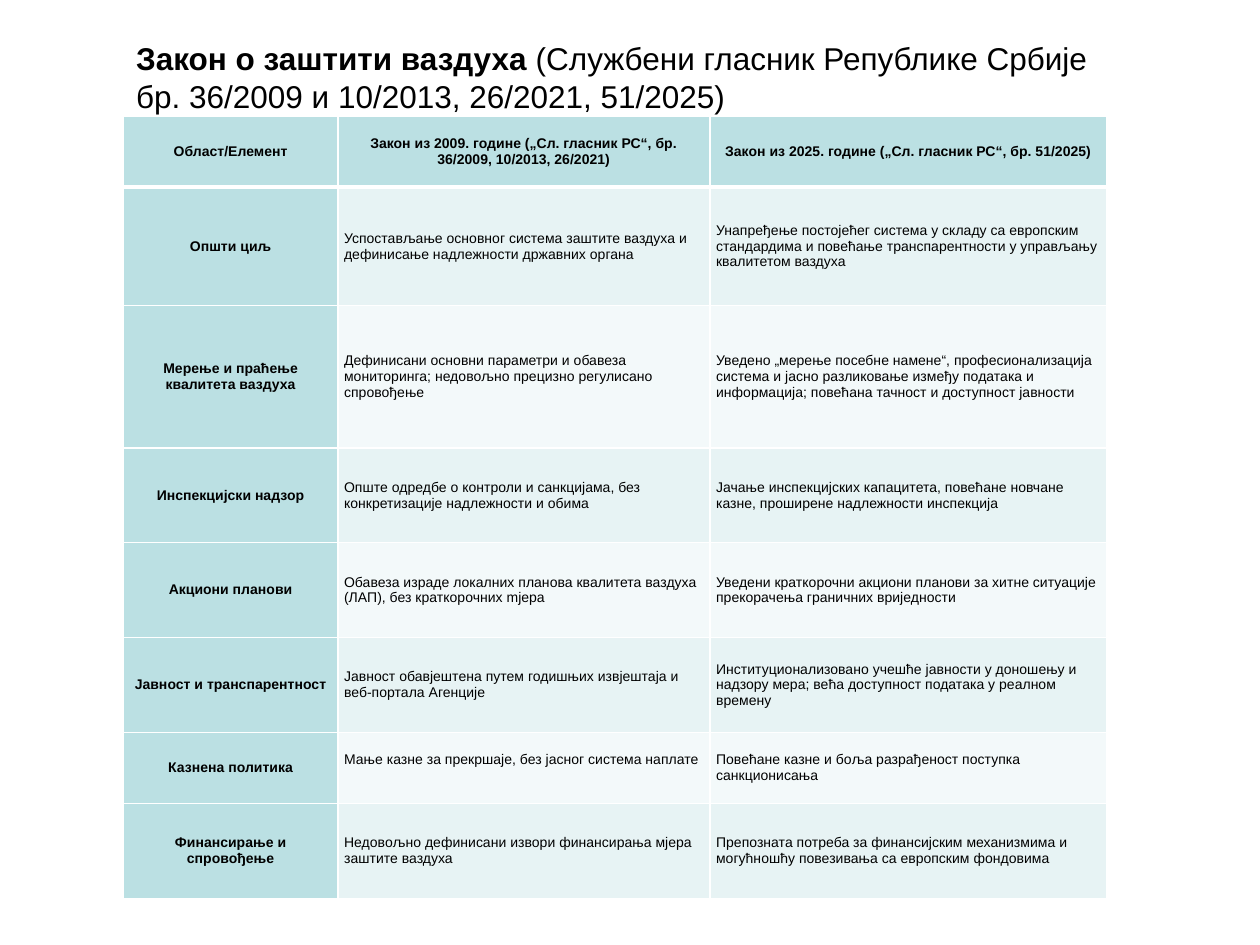
from dataclasses import dataclass

from lxml.etree import SubElement
from pptx import Presentation
from pptx.dml.color import RGBColor
from pptx.enum.text import MSO_ANCHOR as Anchor, MSO_AUTO_SIZE as AutoSize, PP_ALIGN as Align
from pptx.oxml.ns import qn
from pptx.util import Pt


@dataclass(frozen=True)
class Theme:
    font: str = "Arial"
    ink: str = "000000"
    border: str = "FFFFFF"
    label_fill: str = "BBE0E3"
    bands: tuple = ("E7F3F4", "F3F9FA")
    title_size: float = 18
    cell_size: float = 8


def apply(target, values):
    for name, value in values.items():
        setattr(target, name, value)


class LawSlide:
    def __init__(self, slide, theme):
        self.slide = slide
        self.theme = theme

    def add_text(self, paragraph, text, size, bold):
        run = paragraph.add_run()
        run.text = text
        apply(run.font, {"name": self.theme.font, "size": Pt(size), "bold": bold})
        run.font.color.rgb = RGBColor.from_string(self.theme.ink)

    def title(self, name, reference, left, top, width, height):
        heading = self.slide.shapes.title
        apply(heading, {"left": Pt(left), "top": Pt(top), "width": Pt(width), "height": Pt(height)})
        apply(heading.text_frame, {"word_wrap": True, "auto_size": AutoSize.NONE,
                                   "vertical_anchor": Anchor.TOP})
        paragraph = heading.text_frame.paragraphs[0]
        apply(paragraph, {"alignment": Align.LEFT, "space_before": Pt(6), "space_after": Pt(6)})
        self.add_text(paragraph, name, self.theme.title_size, True)
        self.add_text(paragraph, reference, self.theme.title_size, False)

    def borders(self, cell, bottom):
        props = cell._tc.get_or_add_tcPr()
        widths = {"a:lnL": 1, "a:lnR": 1, "a:lnT": 1, "a:lnB": bottom}
        for side, width in widths.items():
            line = SubElement(props, qn(side), w=str(Pt(width)))
            fill = SubElement(line, qn("a:solidFill"))
            SubElement(fill, qn("a:srgbClr"), val=self.theme.border)

    def cell(self, cell, text, is_label, fill, bottom_border):
        # Borders precede the fill in the cell properties
        self.borders(cell, bottom_border)
        cell.fill.solid()
        cell.fill.fore_color.rgb = RGBColor.from_string(fill)
        apply(cell, {"margin_left": Pt(3.6), "margin_right": Pt(3.6), "margin_top": 0,
                     "margin_bottom": 0, "vertical_anchor": Anchor.MIDDLE})
        paragraph = cell.text_frame.paragraphs[0]
        paragraph.alignment = Align.CENTER if is_label else Align.LEFT
        self.add_text(paragraph, text, self.theme.cell_size, is_label)

    def table(self, rows, left, top, column_widths, row_heights):
        frame = self.slide.shapes.add_table(
            len(rows), len(column_widths), Pt(left), Pt(top),
            Pt(sum(column_widths)), Pt(sum(row_heights)))
        table = frame.table
        apply(table, {"first_row": False, "horz_banding": False})
        for column, width in zip(table.columns, column_widths):
            column.width = Pt(width)
        for r, (texts, height) in enumerate(zip(rows, row_heights)):
            table.rows[r].height = Pt(height)
            for c, text in enumerate(texts):
                is_label = r == 0 or c == 0
                fill = self.theme.label_fill if is_label else self.theme.bands[(r - 1) % 2]
                self.cell(table.cell(r, c), text, is_label, fill, 3 if r == 0 else 1)
        return table


COMPARISON = [
    ("Област/Елемент",
     "Закон из 2009. године („Сл. гласник РС“, бр. 36/2009, 10/2013, 26/2021)",
     "Закон из 2025. године („Сл. гласник РС“, бр. 51/2025)"),
    ("Општи циљ",
     "Успостављање основног система заштите ваздуха и дефинисање надлежности државних органа",
     "Унапређење постојећег система у складу са европским стандардима и повећање "
     "транспарентности у управљању квалитетом ваздуха"),
    ("Мерење и праћење квалитета ваздуха",
     "Дефинисани основни параметри и обавеза мониторинга; недовољно прецизно регулисано "
     "спровођење",
     "Уведено „мерење посебне намене“, професионализација система и јасно разликовање између "
     "података и информација; повећана тачност и доступност јавности"),
    ("Инспекцијски надзор",
     "Опште одредбе о контроли и санкцијама, без конкретизације надлежности и обима",
     "Јачање инспекцијских капацитета, повећане новчане казне, проширене надлежности инспекција"),
    ("Акциони планови",
     "Обавеза израде локалних планова квалитета ваздуха (ЛАП), без краткорочних mjера",
     "Уведени краткорочни акциони планови за хитне ситуације прекорачења граничних вриједности"),
    ("Јавност и транспарентност",
     "Јавност обавјештена путем годишњих извјештаја и веб-портала Агенције",
     "Институционализовано учешће јавности у доношењу и надзору мера; већа доступност "
     "података у реалном времену"),
    ("Казнена политика",
     "Мање казне за прекршаје, без јасног система наплате",
     "Повећане казне и боља разрађеност поступка санкционисања"),
    ("Финансирање и спровођење",
     "Недовољно дефинисани извори финансирања мјера заштите ваздуха",
     "Препозната потреба за финансијским механизмима и могућношћу повезивања са европским "
     "фондовима"),
]
ROW_UNIT = 13.55
ROW_UNITS = (3, 5, 6, 4, 4, 4, 3, 4)
PENALTY_ROW = 6


def main():
    deck = Presentation()
    apply(deck, {"slide_width": Pt(720), "slide_height": Pt(540)})
    law = LawSlide(deck.slides.add_slide(deck.slide_layouts[5]), Theme())

    # Title
    law.title("Закон о заштити ваздуха",
              " (Службени гласник Републике Србије бр. 36/2009 и 10/2013, 26/2021, 51/2025)",
              70.6, 18.7, 572.4, 51.1)

    # Comparison of the two laws
    comparison = law.table(COMPARISON, 70.6, 66.2, (122.4, 212.6, 227),
                           [units * ROW_UNIT for units in ROW_UNITS])

    # The old penalty text sits level with the first line of its neighbour
    comparison.cell(PENALTY_ROW, 1).margin_bottom = Pt(9.2)

    deck.save("out.pptx")


if __name__ == "__main__":
    main()
